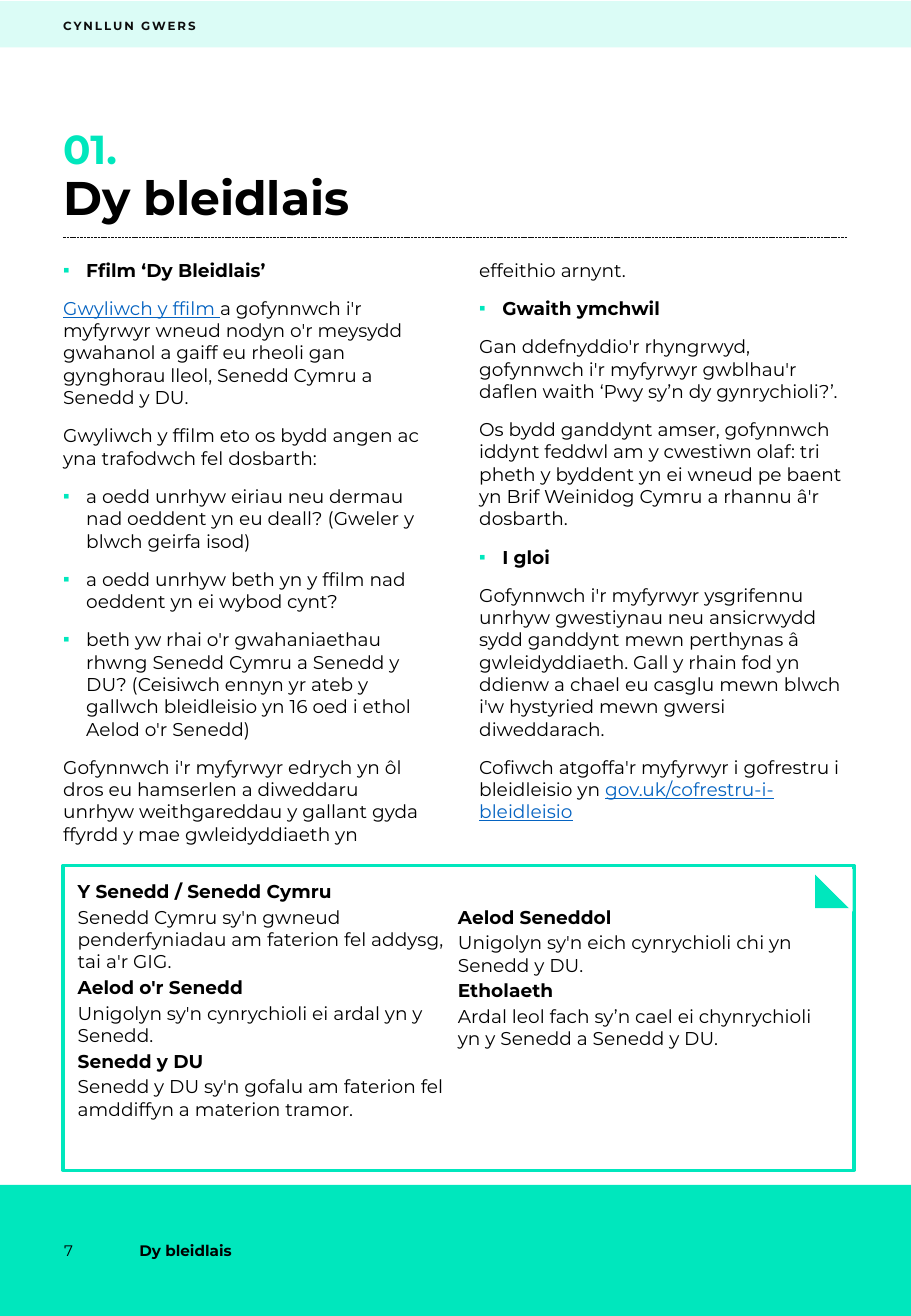
"""Build the "Dy bleidlais" lesson plan page."""
from lxml.etree import SubElement
from pptx import Presentation
from pptx.dml.color import RGBColor
from pptx.enum.dml import MSO_LINE
from pptx.enum.shapes import MSO_CONNECTOR, MSO_SHAPE as SHAPE
from pptx.enum.text import MSO_ANCHOR as ANCHOR
from pptx.oxml.ns import qn
from pptx.util import Emu, Pt

TEAL = RGBColor(0x00, 0xE7, 0xBD)
MINT = RGBColor(0xDB, 0xFC, 0xF6)
BLACK = RGBColor(0, 0, 0)
INK = RGBColor(0x0D, 0x0D, 0x0D)
LINK = RGBColor(0x05, 0x63, 0xC1)
WHITE = RGBColor(0xFF, 0xFF, 0xFF)
FONT = "Montserrat"
SCALE = 9144


def px(*values):
    return [Emu(v * SCALE) for v in values]


def add_text(box, paras, size=11, color=BLACK, anchor=ANCHOR.TOP, inset=0, before=0, after=2):
    """Add a text box; each paragraph is (kind, runs), and a link run is a one-item tuple."""
    tf = s.shapes.add_textbox(*px(*box)).text_frame
    pad = px(inset)[0]
    frame = {"word_wrap": True, "vertical_anchor": anchor, "margin_left": pad,
             "margin_right": pad, "margin_top": 0, "margin_bottom": 0}
    for name, value in frame.items():
        setattr(tf, name, value)
    for i, (kind, *runs) in enumerate(paras):
        p = tf.paragraphs[0] if i == 0 else tf.add_paragraph()
        p.space_before, p.space_after = Pt(before if i else 0), Pt(after)
        if kind in ("bullet", "heading"):
            pPr = p._p.get_or_add_pPr()
            indent = px(19)[0]
            pPr.set("marL", str(indent))
            pPr.set("indent", str(-indent))
            SubElement(SubElement(pPr, qn("a:buClr")), qn("a:srgbClr"), val=str(TEAL))
            SubElement(pPr, qn("a:buFont"), typeface="Arial")
            SubElement(pPr, qn("a:buChar"), char="▪")
        for run in runs:
            linked = isinstance(run, tuple)
            r = p.add_run()
            r.text = run[0] if linked else run
            fmt = {"name": FONT, "size": Pt(size), "bold": kind in ("heading", "bold"),
                   "underline": linked}
            for name, value in fmt.items():
                setattr(r.font, name, value)
            r.font.color.rgb = LINK if linked else color
    return tf


prs = Presentation()
prs.slide_width, prs.slide_height = px(750, 1084)
s = prs.slides.add_slide(prs.slide_layouts[6])

for kind, box, fill, rotation in (
    (SHAPE.RECTANGLE, (0, 976, 750, 108), TEAL, 0),
    (SHAPE.RECTANGLE, (0, 1, 750, 38), MINT, 0),
    (SHAPE.RECTANGLE, (52, 713, 651, 251), None, 0),
    (SHAPE.RIGHT_TRIANGLE, (671, 720, 28, 28), TEAL, 0),
    (SHAPE.RIGHT_TRIANGLE, (667, 716, 35, 35), WHITE, 180),
):
    sp = s.shapes.add_shape(kind, *px(*box))
    sp.shadow.inherit = False
    sp.rotation = rotation
    if fill is None:
        sp.fill.background()
        sp.line.color.rgb = TEAL
        sp.line.width = Pt(2)
    else:
        sp.fill.solid()
        sp.fill.fore_color.rgb = fill
        sp.line.fill.background()

rule = s.shapes.add_connector(MSO_CONNECTOR.STRAIGHT, *px(52, 196, 697, 196))
rule.line.color.rgb = INK
rule.line.width = Pt(0.5)
rule.line.dash_style = MSO_LINE.SQUARE_DOT
SubElement(rule._element.spPr, qn("a:effectLst"))

kicker = add_text((52, 7, 270, 28), [("bold", "CYNLLUN GWERS")], 7, INK, ANCHOR.MIDDLE)
kicker.paragraphs[0].runs[0]._r.get_or_add_rPr().set("spc", "120")
add_text((52, 102, 646, 37), [("bold", "01.")], 24, TEAL)
title = add_text((52, 144, 646, 88), [("bold", "Dy bleidlais")], 28)
title.paragraphs[0].line_spacing = 0.9
add_text((43, 976, 62, 108), [("text", "7")], 9, anchor=ANCHOR.MIDDLE, inset=10, after=0)
add_text((105, 976, 277, 108), [("bold", "Dy bleidlais")], 9, anchor=ANCHOR.MIDDLE, inset=10,
         after=0)

lesson = add_text((52, 213, 646, 492), [
    ("heading", "Ffilm ‘Dy Bleidlais’"),
    ("text", ("Gwyliwch y ffilm ",), "a gofynnwch i'r myfyrwyr wneud nodyn o'r meysydd gwahanol "
     "a gaiff eu rheoli gan gynghorau lleol, Senedd Cymru a Senedd y DU."),
    ("text", "Gwyliwch y ffilm eto os bydd angen ac yna trafodwch fel dosbarth:"),
    ("bullet", "a oedd unrhyw eiriau neu dermau nad oeddent yn eu deall? "
     "(Gweler y blwch geirfa isod)"),
    ("bullet", "a oedd unrhyw beth yn y ffilm nad oeddent yn ei wybod cynt?"),
    ("bullet", "beth yw rhai o'r gwahaniaethau rhwng Senedd Cymru a Senedd y DU? (Ceisiwch ennyn "
     "yr ateb y gallwch bleidleisio yn 16 oed i ethol Aelod o'r Senedd)"),
    ("text", "Gofynnwch i'r myfyrwyr edrych yn ôl dros eu hamserlen a diweddaru unrhyw "
     "weithgareddau y gallant gyda ffyrdd y mae gwleidyddiaeth yn effeithio arnynt."),
    ("heading", "Gwaith ymchwil"),
    ("text", "Gan ddefnyddio'r rhyngrwyd, gofynnwch i'r myfyrwyr gwblhau'r daflen waith "
     "‘Pwy sy’n dy gynrychioli?’."),
    ("text", "Os bydd ganddynt amser, gofynnwch iddynt feddwl am y cwestiwn olaf: tri pheth y "
     "byddent yn ei wneud pe baent yn Brif Weinidog Cymru a rhannu â'r dosbarth."),
    ("heading", "I gloi"),
    ("text", "Gofynnwch i'r myfyrwyr ysgrifennu unrhyw gwestiynau neu ansicrwydd sydd ganddynt "
     "mewn perthynas â gwleidyddiaeth. Gall y rhain fod yn ddienw a chael eu casglu mewn blwch "
     "i'w hystyried mewn gwersi diweddarach."),
    ("text", "Cofiwch atgoffa'r myfyrwyr i gofrestru i bleidleisio yn ",
     ("gov.uk/cofrestru-i-bleidleisio",)),
], before=7.5)
columns = lesson._txBody.bodyPr
columns.set("numCol", "2")
columns.set("spcCol", str(px(39)[0]))

glossary = [
    ((64, 725, 314, 227), [
        ("Y Senedd / Senedd Cymru",
         "Senedd Cymru sy'n gwneud penderfyniadau am faterion fel addysg, tai a'r GIG."),
        ("Aelod o'r Senedd", "Unigolyn sy'n cynrychioli ei ardal yn y Senedd."),
        ("Senedd y DU", "Senedd y DU sy'n gofalu am faterion fel amddiffyn a materion tramor."),
    ]),
    ((377, 746, 314, 206), [
        ("Aelod Seneddol", "Unigolyn sy'n eich cynrychioli chi yn Senedd y DU."),
        ("Etholaeth", "Ardal leol fach sy’n cael ei chynrychioli yn y Senedd a Senedd y DU."),
    ]),
]
for box, entries in glossary:
    add_text(box, [para for term, meaning in entries
                   for para in (("bold", term), ("text", meaning))])

prs.save("out.pptx")
